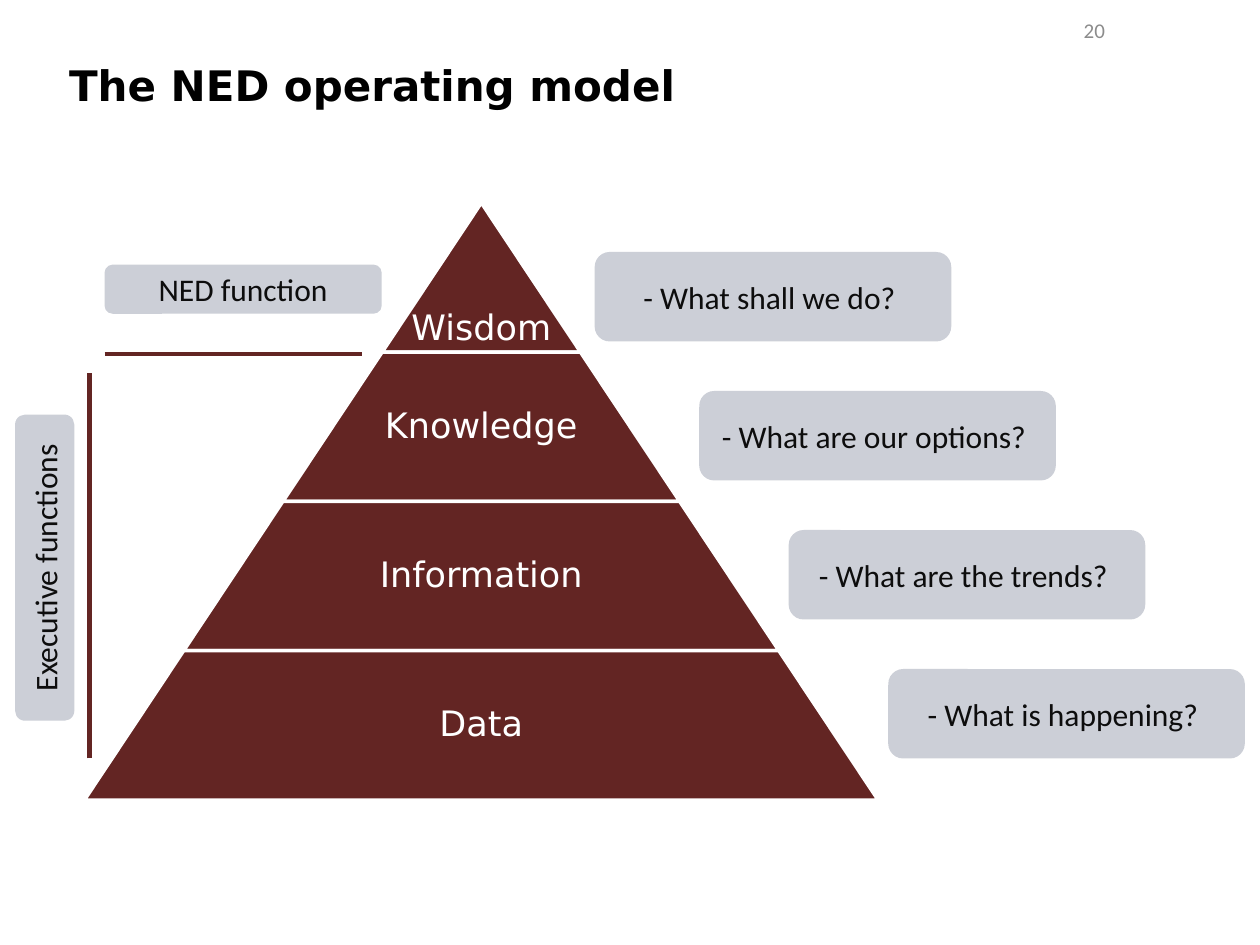
from dataclasses import dataclass
from lxml.etree import SubElement
from pptx import Presentation
from pptx.dml.color import RGBColor
from pptx.enum.shapes import MSO_CONNECTOR, MSO_SHAPE
from pptx.enum.text import MSO_ANCHOR, PP_ALIGN
from pptx.oxml.ns import qn
from pptx.util import Inches, Pt


@dataclass(frozen=True)
class Theme:
    maroon: str = "632523"
    card: str = "CCCFD7"
    white: str = "FFFFFF"
    black: str = "000000"
    ink: str = "0D0D0D"
    grey: str = "8C8C8C"
    heading_font: str = "DejaVu Sans"
    body_font: str = "Calibri"
    title_size: int = 24
    tier_size: int = 20
    card_size: int = 18
    number_size: int = 12
    tier_line: float = 2
    rule_line: float = 2.5


@dataclass(frozen=True)
class Box:
    left: float
    top: float
    width: float
    height: float

    def lengths(self):
        return [grid(value) for value in (self.left, self.top, self.width, self.height)]


THEME = Theme()
COLUMNS, ROWS = 100, 75
CELL = 0.1


def grid(cells):
    return Inches(cells * CELL)


def color(value):
    return RGBColor.from_string(value)


def write(shape, text, font, size, ink, align=PP_ALIGN.CENTER, anchor=MSO_ANCHOR.MIDDLE, bold=False):
    frame = shape.text_frame
    frame.word_wrap = True
    frame.vertical_anchor = anchor
    paragraph = frame.paragraphs[0]
    paragraph.alignment = align
    run = paragraph.add_run()
    run.text = text
    run.font.name = font
    run.font.size = Pt(size)
    run.font.bold = bold
    run.font.color.rgb = color(ink)
    return frame


def add_header(slide, title_box, number_box):
    title = slide.shapes.add_textbox(*title_box.lengths())
    write(title, "The NED operating model", THEME.heading_font, THEME.title_size,
          THEME.black, align=PP_ALIGN.LEFT, bold=True)
    number = slide.shapes.add_textbox(*number_box.lengths())
    write(number, "20", THEME.body_font, THEME.number_size, THEME.grey)


def add_tier(group, box, slant, label, label_share, anchor):
    tier = group.shapes.add_shape(MSO_SHAPE.TRAPEZOID, *box.lengths())
    tier.shadow.inherit = False
    tier.adjustments[0] = slant / min(box.width, box.height)
    tier.fill.solid()
    tier.fill.fore_color.rgb = color(THEME.maroon)
    tier.line.color.rgb = color(THEME.white)
    tier.line.width = Pt(THEME.tier_line)
    label_width = box.width * label_share
    label_box = Box(box.left + (box.width - label_width) / 2, box.top, label_width, box.height)
    caption = group.shapes.add_textbox(*label_box.lengths())
    frame = write(caption, label, THEME.heading_font, THEME.tier_size, THEME.white, anchor=anchor)
    frame.margin_left = frame.margin_right = frame.margin_top = frame.margin_bottom = grid(0.3)
    frame.paragraphs[0].line_spacing = 0.9


def add_pyramid(slide, box, labels):
    group = slide.shapes.add_group_shape()
    height = box.height / len(labels)
    slant = box.width / len(labels) / 2
    for level, label in enumerate(labels):
        width = 2 * slant * (level + 1)
        tier_box = Box(box.left + (box.width - width) / 2, box.top + level * height, width, height)
        is_peak = level == 0
        add_tier(group, tier_box, slant, label, 1 if is_peak else 0.65,
                 MSO_ANCHOR.BOTTOM if is_peak else MSO_ANCHOR.MIDDLE)


def add_card(slide, box, text, rotation=0):
    card = slide.shapes.add_shape(MSO_SHAPE.ROUNDED_RECTANGLE, *box.lengths())
    card.shadow.inherit = False
    card.rotation = rotation
    card.fill.solid()
    card.fill.fore_color.rgb = color(THEME.card)
    card.line.fill.background()
    write(card, text, THEME.body_font, THEME.card_size, THEME.ink)


def add_questions(slide, box, questions):
    card_width, card_height = 28.3, 7.1
    step = (box.height - card_height) / (len(questions) - 1)
    for row, (indent, question) in enumerate(questions):
        card_box = Box(box.left + indent, box.top + row * step, card_width, card_height)
        add_card(slide, card_box, question)


def add_rule(slide, start, end):
    rule = slide.shapes.add_connector(MSO_CONNECTOR.STRAIGHT, *map(grid, start + end))
    rule.line.color.rgb = color(THEME.maroon)
    rule.line.width = Pt(THEME.rule_line)
    SubElement(rule._element.spPr, qn("a:effectLst"))


def add_functions(slide, box):
    corner = box.left + 7.1
    bottom = box.top + box.height
    add_rule(slide, (corner, bottom), (corner, box.top + 8.6))
    add_rule(slide, (corner + 1.2, box.top + 7.1), (corner + 21.6, box.top + 7.1))
    add_card(slide, Box(box.left - 8.6, box.top + 21.7, 24.3, 4.7), "Executive functions", 270)
    add_card(slide, Box(corner + 1.2, box.top, 22, 3.9), "NED function")


def main():
    presentation = Presentation()
    presentation.slide_width = grid(COLUMNS)
    presentation.slide_height = grid(ROWS)
    slide = presentation.slides.add_slide(presentation.slide_layouts[6])
    add_header(slide, Box(4.5, 3.6, 92.9, 6.3), Box(75.2, 0.4, 23.3, 4))
    add_pyramid(slide, Box(6.7, 16.1, 63, 47.4), ["Wisdom", "Knowledge", "Information", "Data"])
    add_questions(slide, Box(47.2, 20, 51.6, 40.2), [
        (0, "- What shall we do? "),
        (8.3, "- What are our options? "),
        (15.4, "- What are the trends? "),
        (23.3, "- What is happening? "),
    ])
    add_functions(slide, Box(0, 21, 30.3, 39.2))
    presentation.save("out.pptx")


if __name__ == "__main__":
    main()
